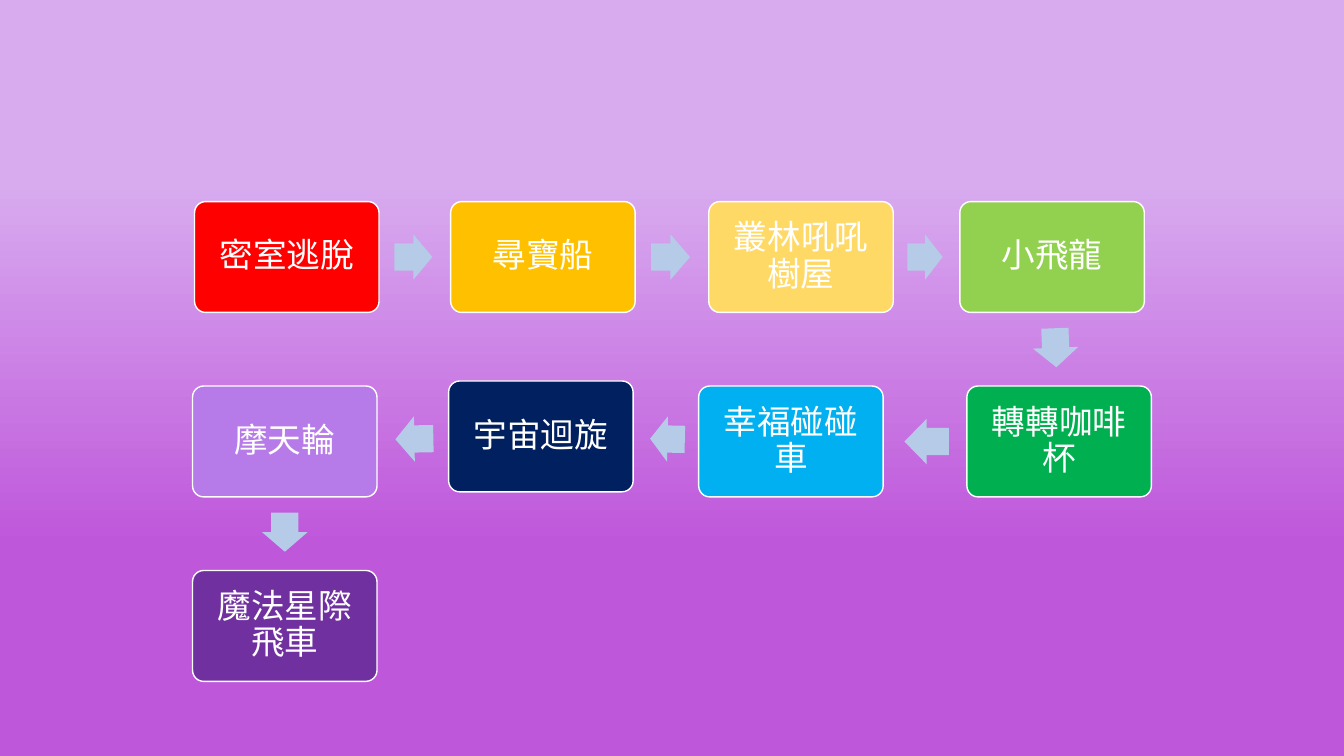
"""Build a flow of nine theme park rides on a purple gradient slide."""
from itertools import pairwise
from math import atan2, cos, degrees, sin

from pptx import Presentation
from pptx.dml.color import RGBColor
from pptx.enum.shapes import MSO_SHAPE
from pptx.enum.text import MSO_ANCHOR, PP_ALIGN
from pptx.util import Inches, Pt

WHITE = RGBColor(0xFF, 0xFF, 0xFF)
ARROW_BLUE = RGBColor(0xB5, 0xCB, 0xE7)
BACKGROUND_STOPS = [
    (0.24, RGBColor(0xD8, 0xAB, 0xEF)),
    (0.72, RGBColor(0xBF, 0x57, 0xDB)),
]
RIDES = [
    ("密室逃脫", 1.93, 2.00, RGBColor(0xFF, 0x00, 0x00)),
    ("尋寶船", 4.47, 2.00, RGBColor(0xFF, 0xC0, 0x00)),
    ("叢林吼吼樹屋", 7.03, 2.00, RGBColor(0xFF, 0xD9, 0x66)),
    ("小飛龍", 9.52, 2.00, RGBColor(0x92, 0xD0, 0x50)),
    ("轉轉咖啡杯", 9.59, 3.83, RGBColor(0x00, 0xB0, 0x50)),
    ("幸福碰碰車", 6.93, 3.83, RGBColor(0x00, 0xB0, 0xF0)),
    ("宇宙迴旋", 4.45, 3.78, RGBColor(0x00, 0x20, 0x60)),
    ("摩天輪", 1.91, 3.83, RGBColor(0xB7, 0x7B, 0xE9)),
    ("魔法星際飛車", 1.91, 5.66, RGBColor(0x70, 0x30, 0xA0)),
]
BOX_WIDTH, BOX_HEIGHT = 1.83, 1.1
ARROW_HEIGHT = 0.45
ARROW_SHARE_OF_GAP = 0.53
ARROW_SETBACK = 0.015
TEXT_INSET = 0.13


def add_filled_shape(slide, kind, left, top, width, height, color, adjustments):
    shape = slide.shapes.add_shape(
        kind, Inches(left), Inches(top), Inches(width), Inches(height)
    )
    shape.shadow.inherit = False
    shape.fill.solid()
    shape.fill.fore_color.rgb = color
    shape.line.fill.background()
    for index, value in enumerate(adjustments):
        shape.adjustments[index] = value
    return shape


def write_text(shape, text, *, size, color, font="Calibri", inset=TEXT_INSET):
    frame = shape.text_frame
    frame.word_wrap = True
    frame.vertical_anchor = MSO_ANCHOR.MIDDLE
    frame.margin_left = frame.margin_right = Inches(inset)
    frame.margin_top = frame.margin_bottom = Inches(inset)
    paragraph = frame.paragraphs[0]
    paragraph.alignment = PP_ALIGN.CENTER
    paragraph.line_spacing = 0.9
    run = paragraph.add_run()
    run.text = text
    run.font.name = font
    run.font.size = Pt(size)
    run.font.color.rgb = color


def add_ride(slide, name, left, top, color):
    box = add_filled_shape(
        slide, MSO_SHAPE.ROUNDED_RECTANGLE, left, top,
        BOX_WIDTH, BOX_HEIGHT, color, [0.1],
    )
    box.line.color.rgb = WHITE
    box.line.width = Pt(1)
    write_text(box, name, size=24, color=WHITE)


def add_arrow(slide, start, end):
    _, start_left, start_top, _ = start
    _, end_left, end_top, _ = end
    across, down = end_left - start_left, end_top - start_top
    angle = atan2(down, across)
    gap = max(abs(across) - BOX_WIDTH, abs(down) - BOX_HEIGHT)
    length = gap * ARROW_SHARE_OF_GAP
    center_x = (start_left + end_left + BOX_WIDTH) / 2 - ARROW_SETBACK * cos(angle)
    center_y = (start_top + end_top + BOX_HEIGHT) / 2 - ARROW_SETBACK * sin(angle)
    arrow = add_filled_shape(
        slide, MSO_SHAPE.RIGHT_ARROW, center_x - length / 2,
        center_y - ARROW_HEIGHT / 2, length, ARROW_HEIGHT, ARROW_BLUE, [0.6, 0.5],
    )
    arrow.rotation = degrees(angle)


def paint_background(slide):
    fill = slide.background.fill
    fill.gradient()
    fill.gradient_angle = 270
    for stop, (position, color) in zip(fill.gradient_stops, BACKGROUND_STOPS):
        stop.position = position
        stop.color.rgb = color


def main():
    presentation = Presentation()
    presentation.slide_width = Inches(13.33)
    presentation.slide_height = Inches(7.5)
    slide = presentation.slides.add_slide(presentation.slide_layouts[6])
    paint_background(slide)
    for ride in RIDES:
        add_ride(slide, *ride)
    for start, end in pairwise(RIDES):
        add_arrow(slide, start, end)
    presentation.save("out.pptx")


if __name__ == "__main__":
    main()
